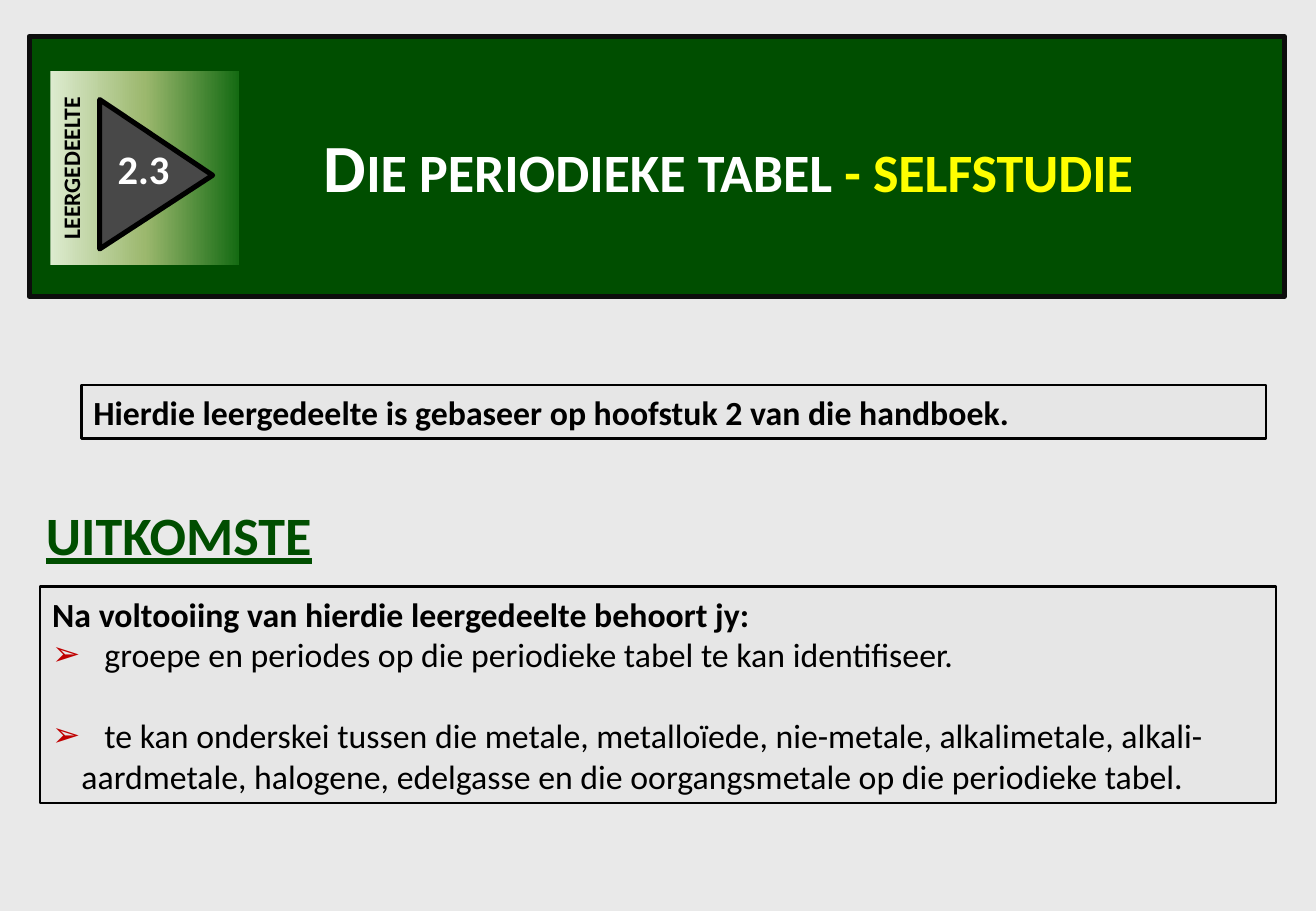
from lxml import etree
from pptx import Presentation
from pptx import util as u
from pptx.dml.color import RGBColor
from pptx.enum import shapes, text
from pptx.oxml import ns

WHITE = RGBColor(0xFF, 0xFF, 0xFF)
BLACK = RGBColor(0, 0, 0)
EDGE = RGBColor(0x0D, 0x0D, 0x0D)
GREEN = RGBColor(0x00, 0x4E, 0x00)
YELLOW = RGBColor(0xFF, 0xFF, 0x00)
RED = RGBColor(0xC0, 0x00, 0x00)
SLATE = RGBColor(0x48, 0x48, 0x48)
PALE = RGBColor(0xE6, 0xE6, 0xE6)
GREY = RGBColor(0xE9, 0xE9, 0xE9)
FADE = [
    (0, RGBColor(0xDD, 0xEB, 0xCF)),
    (50, RGBColor(0x9C, 0xB8, 0x6E)),
    (100, RGBColor(0x15, 0x6B, 0x13)),
]

TITLE = [("Die periodieke tabel ", WHITE), ("- selfstudie", YELLOW)]
UNIT = "LEERGEDEELTE"
NUMBER = "2.3"
BASIS = "Hierdie leergedeelte is gebaseer op hoofstuk 2 van die handboek."
HEADING = "UITKOMSTE"
INTRO = "Na voltooiing van hierdie leergedeelte behoort jy:"
GOALS = [
    "groepe en periodes op die periodieke tabel te kan identifiseer.",
    "te kan onderskei tussen die metale, metalloïede, nie-metale, alkalimetale, "
    "alkali-\taardmetale, halogene, edelgasse en die oorgangsmetale op die "
    "periodieke tabel.",
]
HANG, TAB = u.Inches(0.24), u.Inches(0.43)


def place(shape, *box):
    shape.left, shape.top, shape.width, shape.height = map(u.Inches, box)


def paint(shape, fill, line=None, width=1.5):
    shape.fill.solid()
    shape.fill.fore_color.rgb = fill
    if line is None:
        shape.line.fill.background()
    else:
        shape.line.color.rgb = line
        shape.line.width = u.Pt(width)


def block(kind, *box):
    shape = page.shapes.add_shape(kind, *map(u.Inches, box))
    shape.shadow.inherit = False
    return shape


def frame(shape, anchor=text.MSO_ANCHOR.TOP, wrap=True):
    body = shape.text_frame
    body.word_wrap = wrap
    body.auto_size = text.MSO_AUTO_SIZE.NONE
    body.vertical_anchor = anchor
    return body


def style(para, size, color, bold=True, align=text.PP_ALIGN.LEFT):
    para.alignment = align
    para.space_before = u.Pt(0)
    font = para.font
    font.name, font.size, font.bold = "Calibri", u.Pt(size), bold
    font.color.rgb = color


def write(shape, words, size, color, **look):
    para = shape.text_frame.paragraphs[0]
    para.text = words
    style(para, size, color, **look)
    return para


def add(parent, tag, **attrs):
    node = etree.SubElement(parent, ns.qn(tag))
    for key, value in attrs.items():
        node.set(key, str(value))
    return node


def mark(para, bullet):
    props = para._p.get_or_add_pPr()
    props.set("marL", str(HANG if bullet else 0))
    props.set("indent", str(-HANG if bullet else 0))
    start = props.find(ns.qn("a:defRPr"))
    if bullet:
        color = add(props, "a:buClr")
        add(color, "a:srgbClr", val=RED)
        font = add(props, "a:buFont", typeface="Wingdings")
        font.set("typeface", "Arial")
        sign = add(props, "a:buChar", char="➢")
        tabs = add(props, "a:tabLst")
        add(tabs, "a:tab", pos=TAB, algn="l")
        parts = [color, font, sign, tabs]
    else:
        parts = [add(props, "a:buNone")]
    for part in parts:
        start.addprevious(part)


def fade(shape):
    shape.fill.gradient()
    shape.fill.gradient_angle = 270
    stops = shape._element.spPr.find(".//" + ns.qn("a:gsLst"))
    for stop in list(stops):
        stops.remove(stop)
    for at, color in FADE:
        add(add(stops, "a:gs", pos=at * 1000), "a:srgbClr", val=color)
    shape.line.fill.background()


deck = Presentation()
deck.slide_width, deck.slide_height = u.Inches(10.83), u.Inches(7.5)
page = deck.slides.add_slide(deck.slide_layouts[1])
page.background.fill.solid()
page.background.fill.fore_color.rgb = GREY
RECT = shapes.MSO_SHAPE.RECTANGLE
MIDDLE = text.MSO_ANCHOR.MIDDLE
CENTER = text.PP_ALIGN.CENTER

banner = block(RECT, 0.24, 0.3, 10.33, 2.14)
paint(banner, GREEN, EDGE, 3)
page.shapes._spTree.insert(2, banner._element)

title = page.shapes.title
place(title, 2.33, 0.98, 7.33, 0.77)
para = frame(title).paragraphs[0]
style(para, 40, WHITE, align=CENTER)
for words, color in TITLE:
    run = para.add_run()
    run.text = words
    run.font.color.rgb = color
    run._r.get_or_add_rPr().set("cap", "small")

badge = block(RECT, 0.39, 0.61, 1.6, 1.55)
badge.rotation = 270
fade(badge)
frame(badge)
write(badge, UNIT, 14, BLACK, align=CENTER)

arrow = block(shapes.MSO_SHAPE.ISOSCELES_TRIANGLE, 0.67, 0.97, 1.23, 0.93)
arrow.rotation = 90
arrow.adjustments[0] = 0.507
paint(arrow, SLATE, BLACK, 3)

number = page.shapes.add_textbox(*map(u.Inches, (0.87, 1.14, 0.63, 0.51)))
frame(number, wrap=False)
write(number, NUMBER, 24, WHITE)

basis = block(RECT, 0.67, 3.17, 9.75, 0.44)
paint(basis, PALE, BLACK)
frame(basis, MIDDLE)
write(basis, BASIS, 20, BLACK)

heading = page.shapes.add_textbox(*map(u.Inches, (0.28, 4.08, 2.89, 0.64)))
frame(heading)
write(heading, HEADING, 32, GREEN).font.underline = True

goals = page.placeholders[1]
place(goals, 0.33, 4.83, 10.17, 1.78)
paint(goals, PALE, BLACK)
body = frame(goals, MIDDLE)
mark(write(goals, INTRO, 20, BLACK), False)
for i, goal in enumerate(GOALS):
    para = body.add_paragraph()
    para.text = "\t" + goal
    style(para, 20, BLACK, bold=False)
    para.space_before = u.Pt(24 * i)
    mark(para, True)

deck.save("out.pptx")
